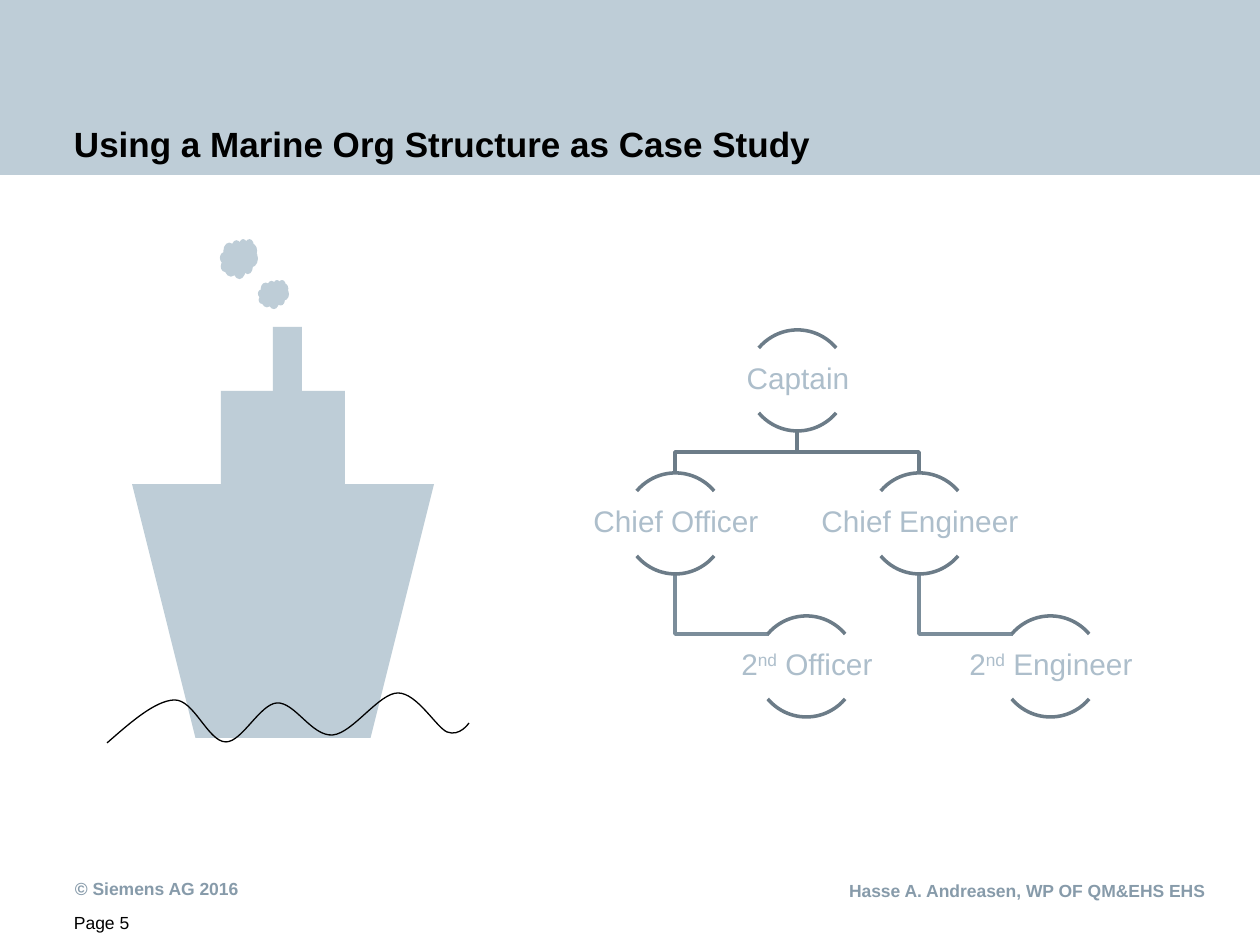
from typing import NamedTuple

from lxml import etree
from pptx import Presentation
from pptx.dml.color import RGBColor
from pptx.enum.shapes import MSO_SHAPE
from pptx.enum.text import MSO_ANCHOR, PP_ALIGN
from pptx.oxml.ns import qn
from pptx.util import Emu, Pt

RECT, CLOUD = MSO_SHAPE.RECTANGLE, MSO_SHAPE.CLOUD
TRAP, ARC = MSO_SHAPE.TRAPEZOID, MSO_SHAPE.ARC
TOP, MID, LOW = MSO_ANCHOR.TOP, MSO_ANCHOR.MIDDLE, MSO_ANCHOR.BOTTOM
LEFT, MIDDLE = PP_ALIGN.LEFT, PP_ALIGN.CENTER

SCALE = 914400 / 126
PALE, GREY, STEEL, SLATE = "BECDD7", "879BAA", "6C7C88", "7B8D9A"
LABEL, BLACK = "ADBECB", "000000"
RING, HALF = 101, 50


class Box(NamedTuple):
    x: int
    y: int
    w: int
    h: int


class Part(NamedTuple):
    kind: MSO_SHAPE
    box: Box
    turn: int = 0


class Role(NamedTuple):
    text: tuple[str, ...]
    x: int
    y: int


def px(n: float) -> Emu:
    return Emu(round(n * SCALE))


def rgb(code: str) -> RGBColor:
    return RGBColor.from_string(code)


def pen(shape, color: str, width: float) -> None:
    shape.shadow.inherit = False
    shape.fill.background()
    shape.line.color.rgb = rgb(color)
    shape.line.width = Pt(width)


def solid(part: Part) -> None:
    shape = shapes.add_shape(part.kind, *map(px, part.box))
    shape.shadow.inherit = False
    shape.fill.solid()
    shape.fill.fore_color.rgb = rgb(PALE)
    shape.line.fill.background()
    shape.rotation = part.turn


def trace(points: list[tuple[int, int]], color: str, width: float):
    path = shapes.build_freeform(*points[0], scale=SCALE)
    path.add_line_segments(points[1:], close=False)
    shape = path.convert_to_shape()
    pen(shape, color, width)
    return shape


def curve(points: list[tuple[int, int]], color: str, width: float) -> None:
    shape = trace(points, color, width)
    path = next(shape.element.iter(qn("a:path")))
    steps = path.findall(qn("a:lnTo"))
    for i in range(0, len(steps), 3):
        bend = etree.SubElement(path, qn("a:cubicBezTo"))
        for step in steps[i:i + 3]:
            bend.append(step[0])
            path.remove(step)


def write(*runs: str, box: Box, size: int, color: str, bold: bool = False,
          inset: tuple[int, ...] = (0, 0, 0, 0), anchor=TOP, align=LEFT,
          space: float = 1.0, wrap: bool = True) -> None:
    frame = shapes.add_textbox(*map(px, box)).text_frame
    frame.word_wrap = wrap
    frame.vertical_anchor = anchor
    (frame.margin_left, frame.margin_top,
     frame.margin_right, frame.margin_bottom) = map(px, inset)
    para = frame.paragraphs[0]
    para.alignment = align
    para.line_spacing = space
    for text in runs:
        run = para.add_run()
        run.text = text
        font = run.font
        font.name, font.size, font.bold = "Arial", Pt(size), bold
        font.color.rgb = rgb(color)
        if text == "nd":
            run._r.get_or_add_rPr().set("baseline", "30000")


def fork(head: Role, child: Role) -> None:
    x, end = head.x + HALF, child.x + HALF
    y = (head.y + RING + child.y) // 2
    trace([(x, head.y + RING), (x, y), (end, y), (end, child.y)], STEEL, 2)


def elbow(head: Role, child: Role) -> None:
    x, y = head.x + HALF, child.y + 18
    trace([(x, head.y + RING), (x, y), (child.x + 13, y)], SLATE, 2)


def draw(role: Role) -> None:
    for start, end in ((132, 192), (24, 84)):
        arc = shapes.add_shape(ARC, px(role.x), px(role.y), px(RING), px(RING))
        arc.adjustments[0], arc.adjustments[1] = start, end
        pen(arc, STEEL, 2)
    write(*role.text, box=Box(role.x - HALF, role.y + 18, 202, 64), size=17,
          color=LABEL, inset=(1, 1, 1, 1), anchor=MID, align=MIDDLE, space=0.9)


deck = Presentation()
deck.slide_width, deck.slide_height = px(1260), px(945)
shapes = deck.slides.add_slide(deck.slide_layouts[6]).shapes

banner = Box(0, 0, 1260, 175)
solid(Part(RECT, banner))
write("© Siemens AG 2016", box=Box(1, 849, 1260, 59), size=10, color=GREY,
      bold=True, inset=(74, 20, 292, 0), anchor=MID)
write("Page 5", box=Box(0, 910, 192, 35), size=10, color=BLACK,
      inset=(74, 0, 0, 16), space=1.1)
write("Hasse A. Andreasen, WP OF QM&EHS EHS", box=Box(849, 878, 370, 35),
      size=10, color=GREY, bold=True, space=1.1, wrap=False)
write("Using a Marine Org Structure as Case Study", box=banner, size=20,
      color=BLACK, bold=True, inset=(74, 54, 292, 33), anchor=LOW)

COL, ROW = 244, 143
left, top = 625, 330
captain = Role(("Captain",), left + COL // 2, top)
chiefs = [Role((f"Chief {name}",), left + i * COL, top + ROW)
          for i, name in enumerate(("Officer", "Engineer"))]
mates = [Role(("2", "nd", f" {name}"), left + 131 + i * COL, top + 2 * ROW)
         for i, name in enumerate(("Officer", "Engineer"))]
for chief, mate in zip(chiefs, mates):
    elbow(chief, mate)
    fork(captain, chief)
for role in (captain, *chiefs, *mates):
    draw(role)

SHIP = [
    Part(TRAP, Box(132, 484, 302, 254), 180),
    Part(RECT, Box(221, 391, 124, 103)),
    Part(RECT, Box(273, 327, 29, 64)),
    Part(CLOUD, Box(258, 280, 31, 29)),
    Part(CLOUD, Box(220, 239, 38, 40)),
]
for part in SHIP:
    solid(part)

WAVE = [
    (107, 743),
    (131, 722), (155, 701), (174, 700),
    (194, 699), (208, 742), (226, 742),
    (242, 742), (260, 704), (277, 703),
    (295, 702), (312, 737), (333, 735),
    (353, 733), (379, 693), (398, 693),
    (417, 693), (436, 727), (447, 732),
    (460, 737), (469, 723), (469, 723),
]
curve(WAVE, BLACK, 0.75)

deck.save("out.pptx")
